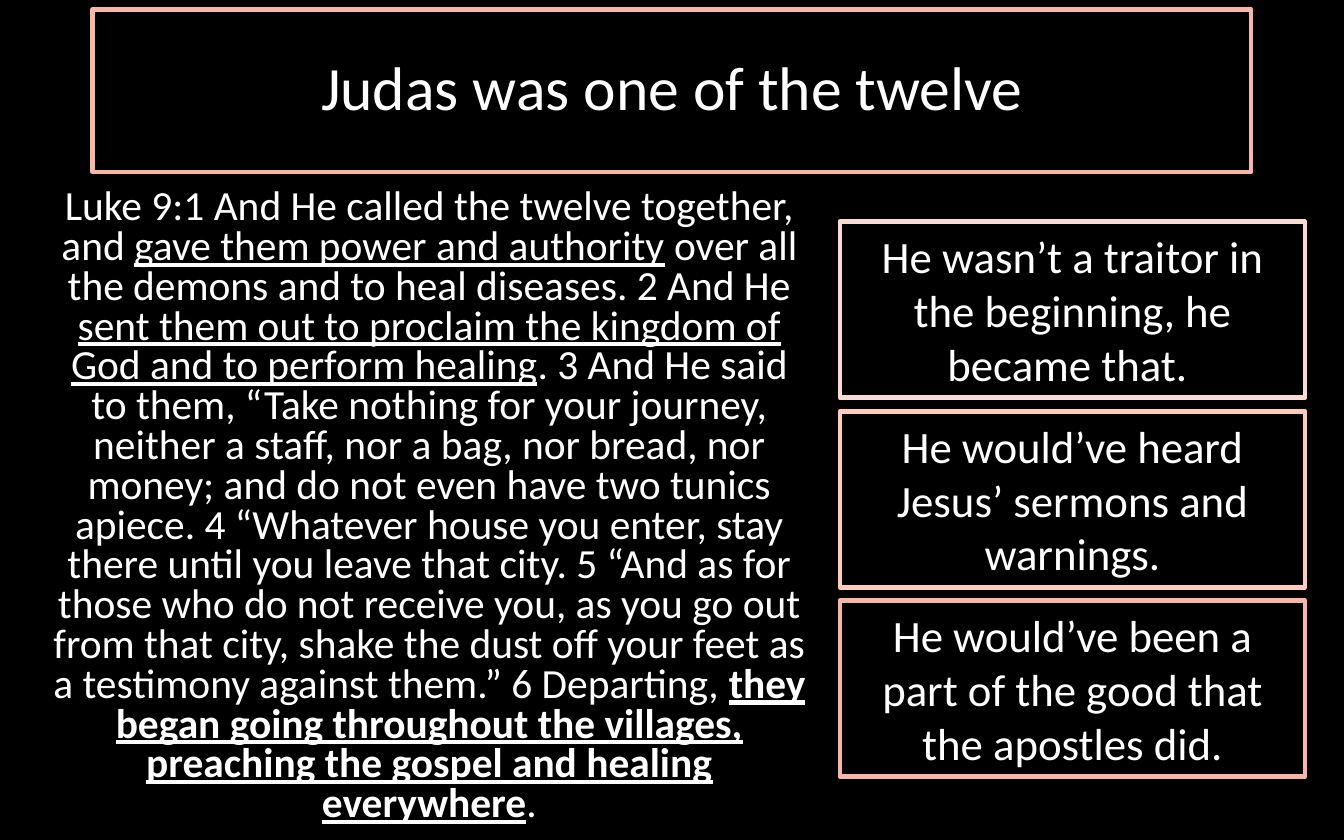
"""Build the slide about Judas as one of the twelve."""
from pptx import Presentation
from pptx.dml.color import RGBColor
from pptx.enum.shapes import MSO_SHAPE
from pptx.enum.text import MSO_ANCHOR, MSO_AUTO_SIZE, PP_ALIGN
from pptx.oxml.ns import qn
from pptx.util import Pt
from lxml.etree import SubElement

BLACK = RGBColor(0x00, 0x00, 0x00)
WHITE = RGBColor(0xFF, 0xFF, 0xFF)
SALMON = RGBColor(0xF6, 0xB7, 0xA7)
PEACH = RGBColor(0xFF, 0xCB, 0xBD)
BLUSH = RGBColor(0xFA, 0xDB, 0xD3)
FONT = "Calibri"

PLAIN, UNDERLINED, STRONG = (False, False), (False, True), (True, True)
TITLE = [("Judas was one of the twelve", PLAIN)]
PASSAGE = [
    ("Luke 9:1 And He called the twelve together, and ", PLAIN),
    ("gave them power and authority", UNDERLINED),
    (" over all the demons and to heal diseases. 2 And He ", PLAIN),
    ("sent them out to proclaim the kingdom of God and to perform healing", UNDERLINED),
    (". 3 And He said to them, “Take nothing for your journey, neither a staff, "
     "nor a bag, nor bread, nor money; and do not even have two tunics apiece. "
     "4 “Whatever house you enter, stay there until you leave that city. "
     "5 “And as for those who do not receive you, as you go out from that city, "
     "shake the dust off your feet as a testimony against them.” 6 Departing, ", PLAIN),
    ("they began going throughout the villages, preaching the gospel and healing "
     "everywhere", STRONG),
    (".", PLAIN),
]
POINTS = [
    ("He wasn’t a traitor in the beginning, he became that. ", BLUSH),
    ("He would’ve heard Jesus’ sermons and warnings.", PEACH),
    ("He would’ve been a part of the good that the apostles did.", SALMON),
]
POINT_LEFT, POINT_TOP, POINT_WIDTH, POINT_HEIGHT, POINT_PITCH = 450, 118.8, 249.1, 94.3, 101.5


def place(box, left, top, width, height):
    box.left, box.top, box.width, box.height = Pt(left), Pt(top), Pt(width), Pt(height)


def outline(box, color):
    box.fill.background()
    box.line.color.rgb = color
    box.line.width = Pt(2.5)


def write(box, spans, size, spacing, fit=MSO_AUTO_SIZE.NONE):
    frame = box.text_frame
    frame.word_wrap = True
    frame.auto_size = fit
    frame.vertical_anchor = MSO_ANCHOR.MIDDLE
    para = frame.paragraphs[0]
    para.alignment = PP_ALIGN.CENTER
    para.line_spacing = spacing
    para.space_before = Pt(0)
    for text, (bold, underline) in spans:
        span = para.add_run()
        span.text = text
        font = span.font
        font.name, font.size, font.bold, font.underline = FONT, Pt(size), bold, underline
        font.color.rgb = WHITE
    return para


def main():
    deck = Presentation()
    deck.slide_width, deck.slide_height = Pt(720), Pt(450)
    page = deck.slides.add_slide(deck.slide_layouts[1])
    page.background.fill.solid()
    page.background.fill.fore_color.rgb = BLACK

    title = page.shapes.title
    place(title, 49.7, 5, 620.6, 87.1)
    outline(title, SALMON)
    write(title, TITLE, 33, 0.9)

    passage = page.placeholders[1]
    place(passage, 20.9, 98.6, 418.3, 346.3)
    para = write(passage, PASSAGE, 22.2, 0.8)
    settings = para._p.get_or_add_pPr()
    settings.set("marL", "0")
    settings.set("indent", "0")
    SubElement(settings, qn("a:buNone"))

    for row, (text, color) in enumerate(POINTS):
        box = page.shapes.add_shape(MSO_SHAPE.RECTANGLE, 0, 0, 0, 0)
        place(box, POINT_LEFT, POINT_TOP + row * POINT_PITCH, POINT_WIDTH, POINT_HEIGHT)
        box.shadow.inherit = False
        outline(box, color)
        write(box, [(text, PLAIN)], 24, 1.0, MSO_AUTO_SIZE.SHAPE_TO_FIT_TEXT)

    deck.save("out.pptx")


if __name__ == "__main__":
    main()
